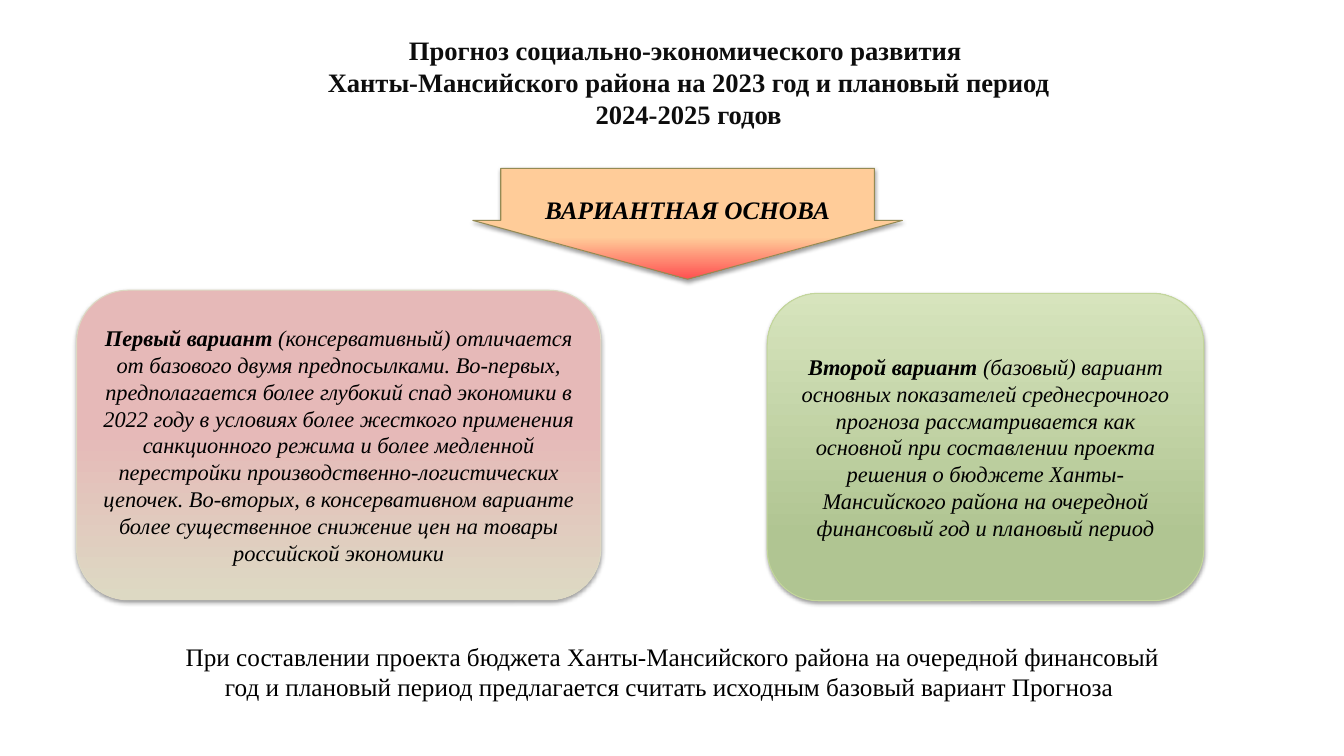
from lxml.etree import SubElement
from pptx import Presentation
from pptx.dml.color import RGBColor
from pptx.enum.shapes import MSO_SHAPE
from pptx.enum.text import MSO_ANCHOR, PP_ALIGN
from pptx.oxml.ns import qn
from pptx.util import Pt

EMU_PER_PX = 9144  # 100 px to the inch
FONT = "Times New Roman"
DOWNWARD, UPWARD = 270, 90  # gradient directions


def px(length):
    return length * EMU_PER_PX


def color(hex_value):
    return RGBColor.from_string(hex_value)


def add_run(paragraph, text, size=18, fill="000000", bold=False, italic=False):
    run = paragraph.add_run()
    run.text = text
    run.font.name = FONT
    run.font.size = Pt(size)
    run.font.bold = bold
    run.font.italic = italic
    run.font.color.rgb = color(fill)


def add_paragraph(text_frame, is_first=True):
    paragraph = text_frame.paragraphs[0] if is_first else text_frame.add_paragraph()
    paragraph.alignment = PP_ALIGN.CENTER
    return paragraph


def add_text(slide, box, lines, **run_format):
    text_frame = slide.shapes.add_textbox(*map(px, box)).text_frame
    text_frame.word_wrap = True
    for index, line in enumerate(lines):
        add_run(add_paragraph(text_frame, index == 0), line, **run_format)


def add_shadow(shape):
    shape.shadow.inherit = False
    effects = shape._element.spPr.find(qn("a:effectLst"))
    shadow = SubElement(effects, qn("a:outerShdw"), blurRad=str(Pt(3.1)),
                        dist=str(Pt(1.6)), dir="5400000", rotWithShape="0")
    shadow_color = SubElement(shadow, qn("a:srgbClr"), val="000000")
    SubElement(shadow_color, qn("a:alpha"), val="38000")


def add_gradient_shape(slide, kind, box, stops, direction, line):
    shape = slide.shapes.add_shape(kind, *map(px, box))
    shape.fill.gradient()
    shape.fill.gradient_angle = direction
    for stop, (position, hex_value) in zip(shape.fill.gradient_stops, stops):
        stop.position = position
        stop.color.rgb = color(hex_value)
    shape.line.color.rgb = color(line)
    shape.line.width = Pt(0.75)
    add_shadow(shape)
    shape.text_frame.word_wrap = True
    shape.text_frame.vertical_anchor = MSO_ANCHOR.MIDDLE
    return shape


def add_variant(slide, box, stops, direction, line, name, description):
    card = add_gradient_shape(slide, MSO_SHAPE.ROUNDED_RECTANGLE, box, stops, direction, line)
    paragraph = add_paragraph(card.text_frame)
    add_run(paragraph, name, size=16, bold=True, italic=True)
    add_run(paragraph, description, size=16, italic=True)


def add_basis_arrow(slide):
    arrow = add_gradient_shape(slide, MSO_SHAPE.DOWN_ARROW, (469, 167, 426, 110),
                               [(0.62, "FFCC99"), (1, "FF5050")], DOWNWARD, "948A54")
    arrow.adjustments[0] = 0.87
    arrow.adjustments[1] = 0.53
    arrow.text_frame.margin_top = px(22)
    arrow.text_frame.margin_bottom = 0
    add_run(add_paragraph(arrow.text_frame), "ВАРИАНТНАЯ ОСНОВА", bold=True, italic=True)


def main():
    presentation = Presentation()
    presentation.slide_width = px(1333)
    presentation.slide_height = px(750)
    slide = presentation.slides.add_slide(presentation.slide_layouts[6])

    # Title
    add_text(slide, (297, 29, 772, 106), [
        "Прогноз социально-экономического развития ",
        "Ханты-Мансийского района на 2023 год и плановый период 2024-2025 годов",
    ], size=19, fill="0D0D0D", bold=True)

    # Arrow leading to the two variants
    add_basis_arrow(slide)

    # Variants
    add_variant(
        slide, (76, 288, 520, 307), [(0.45, "E6B9B8"), (1, "DDD9C3")], DOWNWARD, "DDD9C3",
        "Первый вариант ",
        "(консервативный) отличается от базового двумя предпосылками. Во-первых, "
        "предполагается более глубокий спад экономики в 2022 году в условиях более "
        "жесткого применения санкционного режима и более медленной перестройки "
        "производственно-логистических цепочек. Во-вторых, в консервативном варианте "
        "более существенное снижение цен на товары российской экономики")
    add_variant(
        slide, (761, 291, 433, 305), [(0.21, "B0C592"), (1, "D7E4BD")], UPWARD, "C3D69B",
        "Второй вариант ",
        "(базовый) вариант основных показателей среднесрочного прогноза рассматривается "
        "как основной при составлении проекта решения о бюджете Ханты-Мансийского района "
        "на очередной финансовый год и плановый период")

    # Conclusion
    add_text(slide, (163, 631, 1008, 71), [
        "При составлении проекта бюджета Ханты-Мансийского района на очередной финансовый "
        "год и плановый период предлагается считать исходным базовый вариант Прогноза ",
    ])

    presentation.save("out.pptx")


if __name__ == "__main__":
    main()
